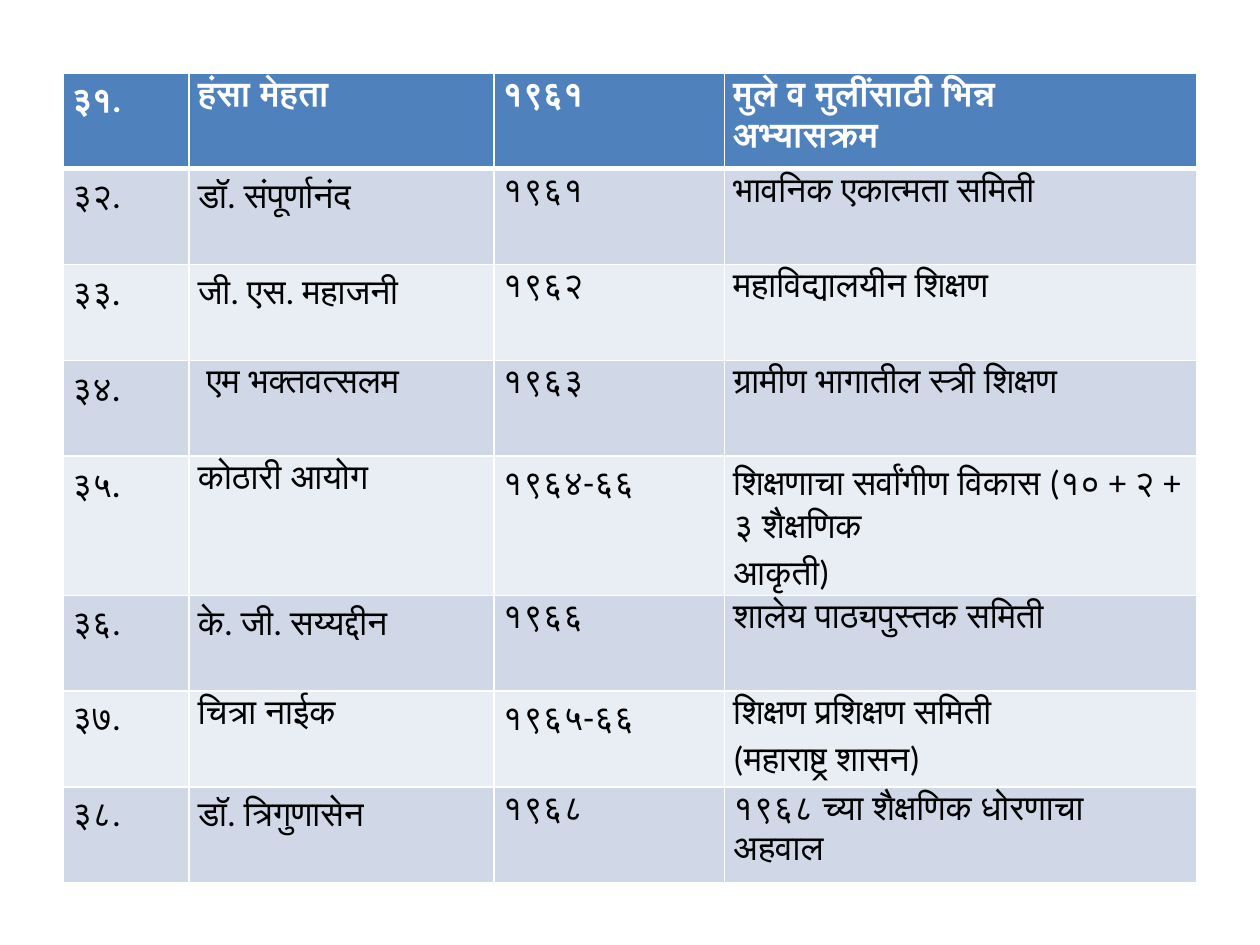
import pptx
import pptx.dml.color
import pptx.oxml
import pptx.oxml.ns
import pptx.util
from pptx.util import Inches

# Content: number, chair or body, year, subject (one paragraph per line)
ROWS = [
    ("३१.", "हंसा मेहता", "१९६१", "मुले व मुलींसाठी भिन्न\nअभ्यासक्रम"),
    ("३२.", "डॉ. संपूर्णानंद", "१९६१", "भावनिक एकात्मता समिती"),
    ("३३.", "जी. एस. महाजनी", "१९६२", "महाविद्यालयीन शिक्षण"),
    ("३४.", " एम भक्तवत्सलम", "१९६३", "ग्रामीण भागातील स्त्री शिक्षण"),
    ("३५.", "कोठारी आयोग", "१९६४-६६",
     "शिक्षणाचा सर्वांगीण विकास (१० + २ + ३ शैक्षणिक\nआकृती)"),
    ("३६.", "के. जी. सय्यद्दीन", "१९६६", "शालेय पाठ्यपुस्तक समिती"),
    ("३७.", "चित्रा नाईक", "१९६५-६६", "शिक्षण प्रशिक्षण समिती\n(महाराष्ट्र शासन)"),
    ("३८.", "डॉ. त्रिगुणासेन", "१९६८", "१९६८ च्या शैक्षणिक धोरणाचा\nअहवाल"),
]
LATO_STOPS = {"३३.", "३४.", "३५."}  # numbers whose full stop is in the second font

# Layout
LEFT, TOP = 0.5, 0.58
COL_WIDTHS = (1, 2.42, 1.83, 3.75)
ROW_HEIGHT, TALL_ROW, TALL_HEIGHT = 0.76, 4, 1.1

THEME = {
    "font": "Calibri", "stop_font": "Lato", "size": 20,
    "head_text": "FFFFFF", "text": "000000",
    "head": "4F81BD", "bands": ("E9EDF4", "D0D8E8"),
    "border": "FFFFFF", "thin": 1, "thick": 3,
}


def rgb(value):
    return pptx.dml.color.RGBColor.from_string(value)


def write(tf, text, *, color, bold=False, stop_font=None):
    """Fill a text frame, one paragraph per line of text."""
    for i, line in enumerate(text.split("\n")):
        p = tf.paragraphs[0] if i == 0 else tf.add_paragraph()
        p.line_spacing = 1.15
        p.space_before = p.space_after = pptx.util.Pt(0.1)
        runs = [(line, THEME["font"])]
        if stop_font:
            runs = [(line[:-1], THEME["font"]), (line[-1], stop_font)]
        for part, font in runs:
            r = p.add_run()
            r.text = part
            r.font.name = font
            r.font.size = pptx.util.Pt(THEME["size"])
            r.font.bold = bold
            r.font.color.rgb = rgb(color)


def set_borders(cell, **widths):
    """Draw the cell edges; must run before the fill is set."""
    tc_pr = cell._tc.get_or_add_tcPr()
    for edge in ("L", "R", "T", "B"):
        width = pptx.util.Pt(widths.get(edge, THEME["thin"]))
        tc_pr.append(pptx.oxml.parse_xml(
            f'<a:ln{edge} {pptx.oxml.ns.nsdecls("a")} w="{int(width)}"><a:solidFill>'
            f'<a:srgbClr val="{THEME["border"]}"/></a:solidFill></a:ln{edge}>'))


def main():
    prs = pptx.Presentation()
    prs.slide_width, prs.slide_height = Inches(10), Inches(7.5)
    s = prs.slides.add_slide(prs.slide_layouts[6])

    # Table grid
    heights = [TALL_HEIGHT if i == TALL_ROW else ROW_HEIGHT for i in range(len(ROWS))]
    table = s.shapes.add_table(
        len(ROWS), len(COL_WIDTHS), Inches(LEFT), Inches(TOP),
        Inches(sum(COL_WIDTHS)), Inches(sum(heights))).table
    for column, width in zip(table.columns, COL_WIDTHS):
        column.width = Inches(width)

    # Cells
    for i, (row, texts) in enumerate(zip(table.rows, ROWS)):
        row.height = Inches(heights[i])
        head = i == 0
        for cell, text in zip(row.cells, texts):
            cell.margin_left = cell.margin_right = Inches(0.07)
            cell.margin_top = cell.margin_bottom = 0
            set_borders(cell, T=THEME["thick" if i == 1 else "thin"],
                        B=THEME["thick" if head else "thin"])
            cell.fill.solid()
            cell.fill.fore_color.rgb = rgb(THEME["head"] if head else THEME["bands"][i % 2])
            write(cell.text_frame, text, bold=head,
                  color=THEME["head_text" if head else "text"],
                  stop_font=THEME["stop_font"] if text in LATO_STOPS else None)

    prs.save("out.pptx")


if __name__ == "__main__":
    main()
